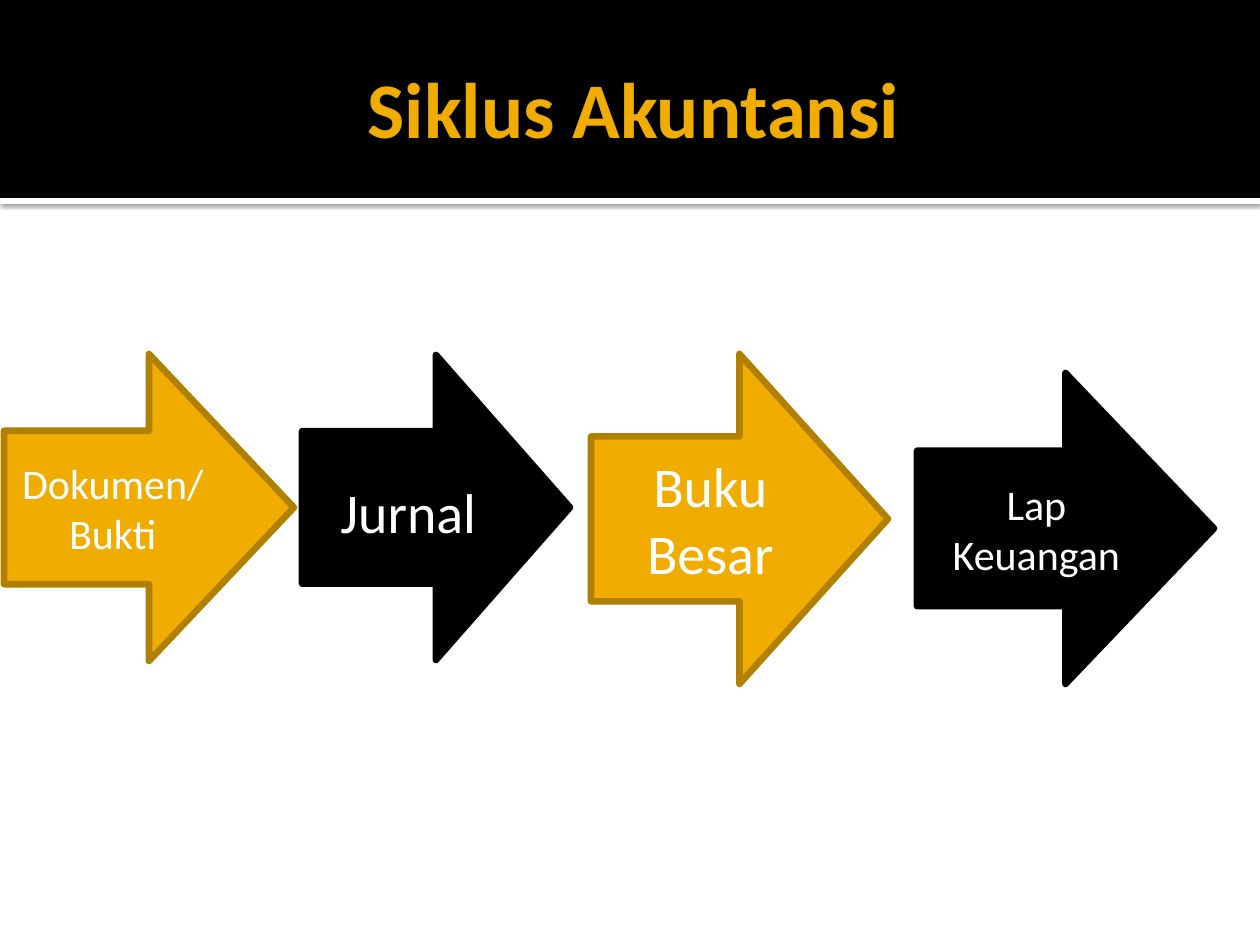
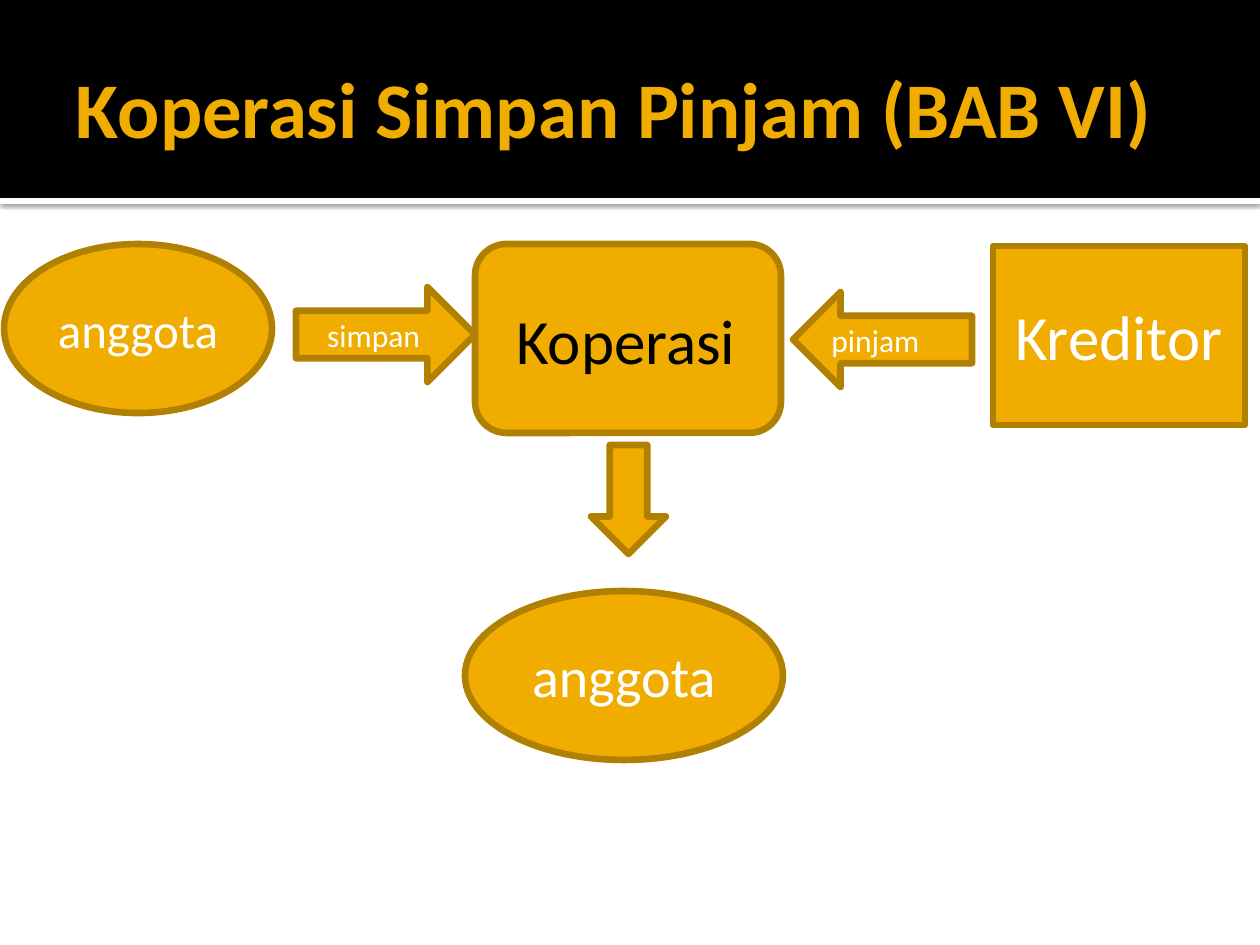
from lxml import etree
from pptx import Presentation
from pptx.dml.color import RGBColor
from pptx.enum.shapes import MSO_SHAPE as Kind
from pptx.enum.text import MSO_ANCHOR as Anchor, MSO_AUTO_SIZE as Auto, PP_ALIGN as Align
from pptx.oxml.ns import qn
from pptx.util import Pt

PX = 914400 / 126
FONT = "Calibri"
GOLD = RGBColor(0xF0, 0xAD, 0x00)
BROWN = RGBColor(0xB2, 0x80, 0x00)
BLACK = RGBColor(0, 0, 0)
WHITE = RGBColor(0xFF, 0xFF, 0xFF)


def draw(slide, kind, box, fill, edge=None):
    shape = slide.shapes.add_shape(kind, *[round(n * PX) for n in box])
    shape.shadow.inherit = False
    shape.fill.solid()
    shape.fill.fore_color.rgb = fill
    if edge is None:
        shape.line.fill.background()
    else:
        shape.line.color.rgb = edge
        shape.line.width = Pt(3.78)
    return shape


def write(frame, text, size, color=WHITE, align=Align.CENTER, anchor=Anchor.MIDDLE, bold=False):
    frame.word_wrap = True
    frame.auto_size = Auto.NONE
    frame.vertical_anchor = anchor
    par = frame.paragraphs[0]
    par.alignment = align
    run = par.add_run()
    run.text = text
    font = run.font
    font.name = FONT
    font.size = Pt(size)
    font.bold = bold
    font.color.rgb = color
    return par


deck = Presentation()
deck.slide_width = round(1260 * PX)
deck.slide_height = round(945 * PX)
layout = deck.slide_layouts[5]

titles = [
    ("Siklus Akuntansi", Align.CENTER),
    ("Koperasi Simpan Pinjam (BAB VI)", Align.LEFT),
]
slides = []
for text, align in titles:
    slide = deck.slides.add_slide(layout)
    title = slide.shapes.title
    title.left, title.top, title.width, title.height = [round(n * PX) for n in (63, 21, 1134, 173)]
    frame = title.text_frame
    frame.margin_left = round(13 * PX)
    frame.margin_right = frame.margin_top = frame.margin_bottom = round(6 * PX)
    write(frame, text, 45, GOLD, align, bold=True)
    slides.append(slide)
cycle, loan = slides

strip = draw(cycle, Kind.RECTANGLE, (0, 198, 1260, 6), WHITE)
band = draw(cycle, Kind.RECTANGLE, (0, 0, 1260, 198), BLACK)
glow = strip.element.spPr.find(qn("a:effectLst"))
shade = etree.SubElement(glow, qn("a:outerShdw"), blurRad=str(Pt(2.5)), dist=str(Pt(0.8)),
                         dir="5400000", algn="tl", rotWithShape="0")
tint = etree.SubElement(shade, qn("a:srgbClr"), val=str(BLACK))
etree.SubElement(tint, qn("a:alpha"), val="60000")
for spot, part in enumerate((strip, band)):
    part.element.nvSpPr.cNvPr.set("id", str(20 + spot))
    layout.shapes.element.insert(2 + spot, part.element)

steps = [
    ("Dokumen/Bukti", 24, (4, 354, 290, 307), GOLD, BROWN, 0),
    ("Jurnal", 32, (302, 355, 268, 305), BLACK, BLACK, 16),
    ("Buku Besar", 32, (591, 354, 297, 330), GOLD, BROWN, 16),
    ("Lap Keuangan", 24, (917, 373, 297, 311), BLACK, BLACK, 16),
]
for text, size, box, fill, edge, dent in steps:
    arrow = draw(cycle, Kind.RIGHT_ARROW, box, fill, edge)
    par = write(arrow.text_frame, text, size)
    props = par._p.get_or_add_pPr()
    props.set("marL", str(round(dent * PX)))
    props.set("indent", "0")
    if text == "Jurnal":
        arrow.text_frame.margin_left = round(8 * PX)
        arrow.text_frame.margin_top = round(13 * PX)

nodes = [
    (Kind.OVAL, (4, 244, 268, 169), "anggota", 28, 0),
    (Kind.OVAL, (465, 591, 318, 169), "anggota", 32, 0),
    (Kind.RECTANGLE, (993, 246, 252, 179), "Kreditor", 36, 0),
    (Kind.ROUNDED_RECTANGLE, (475, 244, 306, 189), None, 0, 0),
    (Kind.DOWN_ARROW, (591, 445, 75, 109), None, 0, 0),
    (Kind.RIGHT_ARROW, (296, 287, 179, 95), "simpan", 18, 0),
    (Kind.RIGHT_ARROW, (793, 292, 179, 95), None, 0, 180),
]
for kind, box, text, size, turn in nodes:
    node = draw(loan, kind, box, GOLD, BROWN)
    node.rotation = turn
    if text:
        write(node.text_frame, text, size)

labels = [
    ("Koperasi", 36, BLACK, (504, 295, 277, 89)),
    ("pinjam", 18, WHITE, (819, 315, 152, 50)),
]
for text, size, color, box in labels:
    label = loan.shapes.add_textbox(*[round(n * PX) for n in box])
    write(label.text_frame, text, size, color, Align.LEFT, Anchor.TOP)

deck.save("out.pptx")
